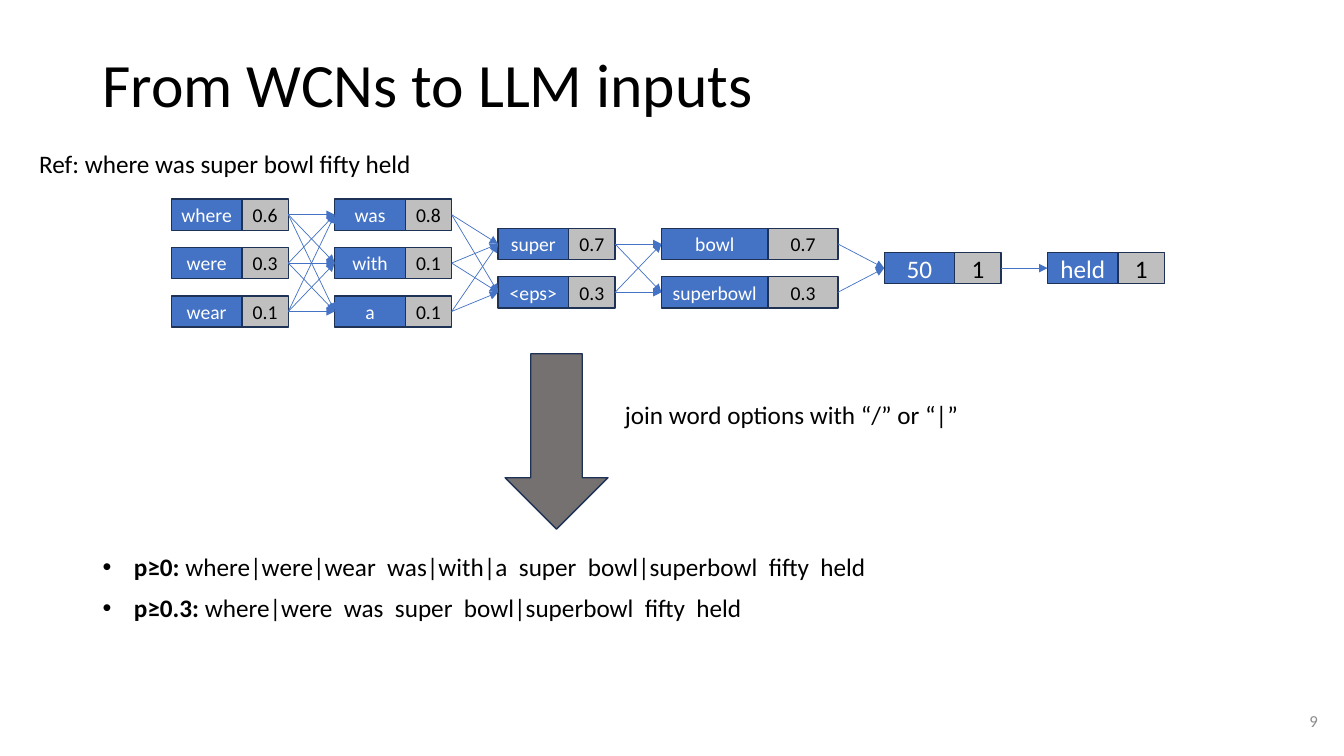
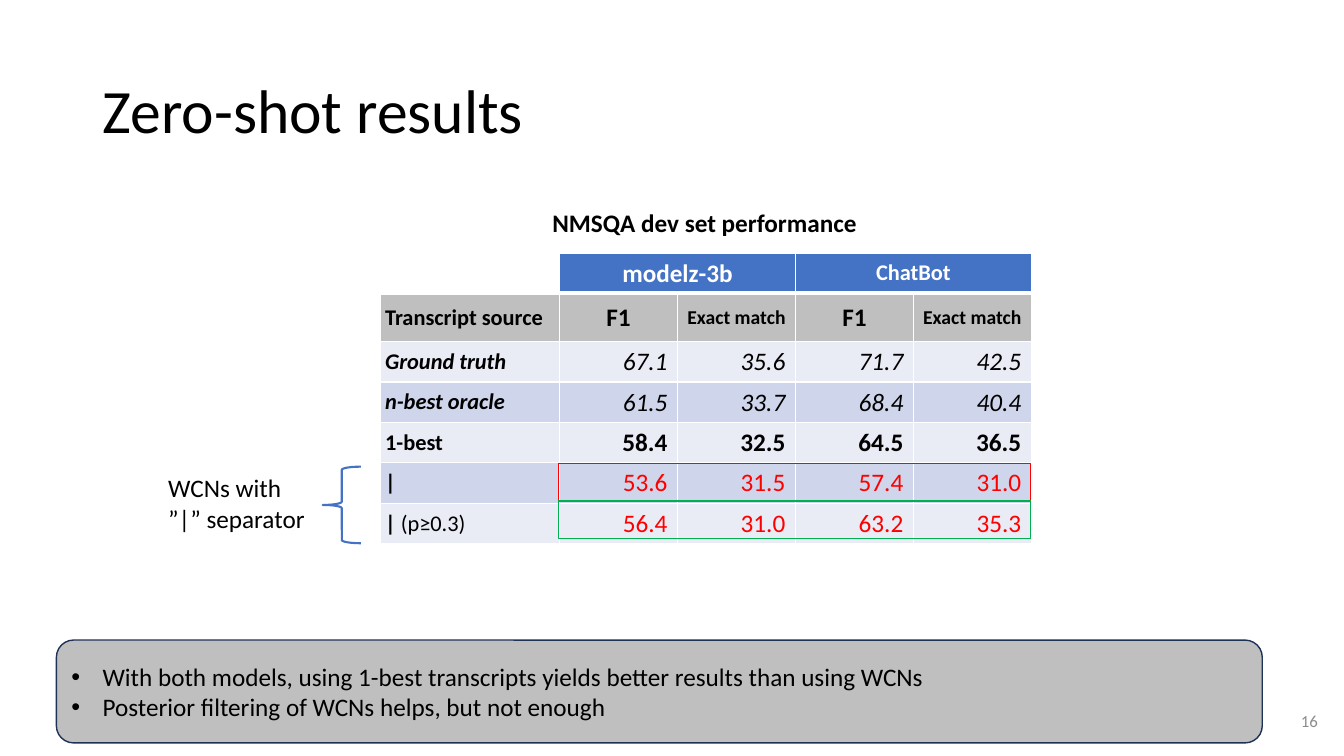
import itertools

import pptx
import pptx.util
import pptx.oxml
import pptx.oxml.ns
import pptx.dml.color
import pptx.enum.shapes
import pptx.enum.text
import lxml.etree

Inches = pptx.util.Inches
Pt = pptx.util.Pt
RGBColor = pptx.dml.color.RGBColor
MSO_SHAPE = pptx.enum.shapes.MSO_SHAPE
ALIGN = pptx.enum.text.PP_ALIGN
ANCHOR = pptx.enum.text.MSO_ANCHOR
qn = pptx.oxml.ns.qn

# Shared look
FONT = "Calibri"
BLACK = RGBColor(0x00, 0x00, 0x00)
WHITE = RGBColor(0xFF, 0xFF, 0xFF)
BLUE = RGBColor(0x44, 0x72, 0xC4)
NAVY = RGBColor(0x1E, 0x32, 0x56)
SILVER = RGBColor(0xBF, 0xBF, 0xBF)
ARROW_GRAY = RGBColor(0x76, 0x71, 0x71)
NUMBER_GRAY = RGBColor(0x8C, 0x8C, 0x8C)
RED = RGBColor(0xFF, 0x00, 0x00)
GREEN = RGBColor(0x00, 0xB0, 0x50)
BAND_LIGHT = RGBColor(0xE9, 0xEB, 0xF5)
BAND_DARK = RGBColor(0xCF, 0xD5, 0xEA)

# Confusion network: words with probabilities, one slot after another
BOX_HEIGHT = 0.31
ROW_PITCH = 0.48
SLOT_GAP = 0.46
NETWORK_LEFT = 1.7
NARROW = (0.7, 0.46)
WIDE = (1.06, 0.69)
SLOTS = [  # middle, (word width, probability width), text size, options
    (2.61, NARROW, 14, [("where", "0.6"), ("were", "0.3"), ("wear", "0.1")]),
    (2.61, NARROW, 14, [("was", "0.8"), ("with", "0.1"), ("a", "0.1")]),
    (2.66, NARROW, 14, [("super", "0.7"), ("<eps>", "0.3")]),
    (2.66, WIDE, 14, [("bowl", "0.7"), ("superbowl", "0.3")]),
    (2.66, NARROW, 18, [("50", "1")]),
    (2.66, NARROW, 18, [("held", "1")]),
]

# Result rows: label, label remainder, values, bold, italic, colour
RESULTS = [
    ("Ground truth", "", ["67.1", "35.6", "71.7", "42.5"], False, True, BLACK),
    ("n-best oracle", "", ["61.5", "33.7", "68.4", "40.4"], False, True, BLACK),
    ("1-best", "", ["58.4", "32.5", "64.5", "36.5"], True, False, BLACK),
    ("|", "", ["53.6", "31.5", "57.4", "31.0"], False, False, RED),
    ("| ", "(p≥0.3)", ["56.4", "31.0", "63.2", "35.3"], False, False, RED),
]
COLUMN_WIDTHS = [1.78] + [1.17] * 4
ROW_HEIGHTS = [0.4, 0.48] + [0.4] * 5


def add_run(paragraph, text, size=18, color=BLACK, bold=False, italic=False):
    run = paragraph.add_run()
    run.text = text
    font = run.font
    font.name, font.size, font.bold, font.italic = FONT, Pt(size), bold, italic
    font.color.rgb = color


def add_bullet(paragraph):
    properties = paragraph._p.get_or_add_pPr()
    properties.set("marL", str(Inches(0.31)))
    properties.set("indent", str(Inches(-0.31)))
    font = lxml.etree.SubElement(properties, qn("a:buFont"))
    font.set("typeface", "Arial")
    lxml.etree.SubElement(properties, qn("a:buChar")).set("char", "•")


def write_lines(text_frame, lines, bullets=False, align=ALIGN.LEFT, **style):
    """Each line is a text, or a pair of a bold lead and plain text."""
    for index, line in enumerate(lines):
        paragraph = text_frame.paragraphs[0] if index == 0 else text_frame.add_paragraph()
        paragraph.alignment = align
        if bullets:
            add_bullet(paragraph)
        if isinstance(line, tuple):
            add_run(paragraph, line[0], **{**style, "bold": True})
            line = line[1]
        add_run(paragraph, line, **style)


def add_text(slide, box, lines, wrap=True, anchor=ANCHOR.TOP, **style):
    shape = slide.shapes.add_textbox(*map(Inches, box))
    shape.text_frame.word_wrap = wrap
    shape.text_frame.vertical_anchor = anchor
    write_lines(shape.text_frame, lines, **style)
    return shape


def add_shape(slide, kind, box, fill=None, line=NAVY, line_width=1):
    shape = slide.shapes.add_shape(kind, *map(Inches, box))
    shape.shadow.inherit = False
    if fill is None:
        shape.fill.background()
    else:
        shape.fill.solid()
        shape.fill.fore_color.rgb = fill
    shape.line.color.rgb = line
    shape.line.width = Pt(line_width)
    return shape


def add_label_box(slide, box, text, fill, color, size):
    shape = add_shape(slide, MSO_SHAPE.RECTANGLE, box, fill)
    text_frame = shape.text_frame
    text_frame.margin_left = text_frame.margin_right = Inches(0.05)
    text_frame.vertical_anchor = ANCHOR.MIDDLE
    write_lines(text_frame, [text], align=ALIGN.CENTER, size=size, color=color)
    return shape


def add_arrow(slide, source, target):
    connector = slide.shapes.add_connector(
        pptx.enum.shapes.MSO_CONNECTOR.STRAIGHT, 0, 0, 0, 0)
    connector.begin_connect(source, 3)
    connector.end_connect(target, 1)
    connector.line.color.rgb = BLUE
    connector.line.width = Pt(0.5)
    line = connector.line._get_or_add_ln()
    lxml.etree.SubElement(line, qn("a:tailEnd")).set("type", "triangle")
    lxml.etree.SubElement(connector._element.spPr, qn("a:effectLst"))


def add_network(slide):
    columns = []
    left = NETWORK_LEFT
    for middle, (word_width, chance_width), size, options in SLOTS:
        top = middle - ((len(options) - 1) * ROW_PITCH + BOX_HEIGHT) / 2
        column = []
        for row, (word, chance) in enumerate(options):
            y = top + row * ROW_PITCH
            column.append((
                add_label_box(slide, (left, y, word_width, BOX_HEIGHT),
                              word, BLUE, WHITE, size),
                add_label_box(slide, (left + word_width, y, chance_width, BOX_HEIGHT),
                              chance, SILVER, BLACK, size)))
        columns.append(column)
        left += word_width + chance_width + SLOT_GAP
    for column, following in zip(columns, columns[1:]):
        for source, target in itertools.product(column, following):
            add_arrow(slide, source[1], target[0])


def set_borders(cell, **widths):
    properties = cell._tc.get_or_add_tcPr()
    for index, side in enumerate("LRTB"):
        line = lxml.etree.Element(qn("a:ln" + side))
        line.set("w", str(Pt(widths.get(side, 1))))
        fill = lxml.etree.SubElement(line, qn("a:solidFill"))
        lxml.etree.SubElement(fill, qn("a:srgbClr")).set("val", str(WHITE))
        properties.insert(index, line)


def fill_cell(cell, line, fill, margin=0.05, align=ALIGN.LEFT, **style):
    cell.fill.solid()
    cell.fill.fore_color.rgb = fill
    cell.vertical_anchor = ANCHOR.MIDDLE
    cell.margin_left = cell.margin_right = Inches(margin)
    write_lines(cell.text_frame, [line], align=align, **style)


def add_results_table(slide):
    frame = slide.shapes.add_table(
        len(ROW_HEIGHTS), len(COLUMN_WIDTHS), Inches(3.77), Inches(2.51),
        Inches(sum(COLUMN_WIDTHS)), Inches(sum(ROW_HEIGHTS)))
    table = frame.table
    table.first_row = table.horz_banding = False
    for column, width in zip(table.columns, COLUMN_WIDTHS):
        column.width = Inches(width)
    for row, height in zip(table.rows, ROW_HEIGHTS):
        row.height = Inches(height)

    # Model names over pairs of columns
    table.cell(0, 0).fill.background()
    for column, name, size in [(1, "modelz-3b", 18), (3, "ChatBot", 16)]:
        table.cell(0, column).merge(table.cell(0, column + 1))
        fill_cell(table.cell(0, column), name, BLUE, align=ALIGN.CENTER,
                  size=size, color=WHITE, bold=True)

    # Column headings
    fill_cell(table.cell(1, 0), "Transcript source", SILVER, size=16, bold=True)
    for column, (heading, size) in enumerate([("F1", 18), ("Exact match", 14)] * 2, 1):
        fill_cell(table.cell(1, column), heading, SILVER, align=ALIGN.CENTER,
                  size=size, bold=True)

    # Results
    for row, (lead, rest, values, bold, italic, color) in enumerate(RESULTS, 2):
        band = BAND_DARK if row % 2 else BAND_LIGHT
        label = (lead, rest) if rest else lead
        fill_cell(table.cell(row, 0), label, band, size=16,
                  bold=not rest, italic=italic)
        for column, value in enumerate(values, 1):
            fill_cell(table.cell(row, column), value, band, margin=0.1,
                      align=ALIGN.RIGHT, color=color, bold=bold, italic=italic)

    for row in range(len(ROW_HEIGHTS)):
        thick = {0: {"B": 3}, 1: {"T": 3}}.get(row, {})
        for column in range(len(COLUMN_WIDTHS)):
            set_borders(table.cell(row, column), **thick)


def new_slide(presentation, title, title_box, number):
    slide = presentation.slides.add_slide(presentation.slide_layouts[6])
    heading = add_text(slide, title_box, [title], anchor=ANCHOR.MIDDLE, size=44)
    heading.text_frame.paragraphs[0].line_spacing = 0.9
    add_text(slide, (10.17, 6.95, 3, 0.4), [number], anchor=ANCHOR.MIDDLE,
             align=ALIGN.RIGHT, size=12, color=NUMBER_GRAY)
    return slide


def build_inputs_slide(presentation):
    slide = new_slide(presentation, "From WCNs to LLM inputs",
                      (0.92, 0.4, 10.37, 0.94), "9")
    add_text(slide, (0.29, 1.42, 4.45, 0.4), ["Ref: where was super bowl fifty held"])
    add_network(slide)
    add_shape(slide, MSO_SHAPE.DOWN_ARROW, (5.01, 3.51, 1.02, 1.74), ARROW_GRAY)
    add_text(slide, (6.1, 3.91, 3.54, 0.4),
             ["join word options with “/” or “|”"], wrap=False)
    # Resulting inputs for two probability thresholds
    add_text(slide, (0.92, 5.42, 7.87, 0.4),
             [("p≥0: ", "where|were|wear  was|with|a  super  bowl|superbowl  fifty  held")],
             wrap=False, bullets=True)
    add_text(slide, (0.92, 5.83, 6.63, 0.4),
             [("p≥0.3: ", "where|were  was  super  bowl|superbowl  fifty  held")],
             wrap=False, bullets=True)


def build_results_slide(presentation):
    slide = new_slide(presentation, "Zero-shot results", (0.92, 0.4, 11.5, 1.45), "16")
    add_results_table(slide)
    add_text(slide, (5.38, 2.01, 3.25, 0.4), ["NMSQA dev set performance"],
             wrap=False, bold=True)
    # Takeaways
    panel = add_shape(slide, MSO_SHAPE.ROUNDED_RECTANGLE, (0.56, 6.35, 11.96, 1.02), SILVER)
    panel.text_frame.vertical_anchor = ANCHOR.MIDDLE
    write_lines(panel.text_frame, [
        "With both models, using 1-best transcripts yields better results than using WCNs",
        "Posterior filtering of WCNs helps, but not enough"], bullets=True)
    # Marks on the last two rows
    add_text(slide, (1.57, 4.64, 1.72, 0.71), ["WCNs with", "”|” separator"])
    add_shape(slide, MSO_SHAPE.LEFT_BRACE, (3.2, 4.63, 0.38, 0.76),
              line=BLUE, line_width=1.5)
    for index, color in enumerate([RED, GREEN]):
        add_shape(slide, MSO_SHAPE.RECTANGLE,
                  (5.54, 4.6 + index * 0.37, 4.68, 0.37), line=color)


def main():
    presentation = pptx.Presentation()
    presentation.slide_width = Inches(13.33)
    presentation.slide_height = Inches(7.5)
    build_inputs_slide(presentation)
    build_results_slide(presentation)
    presentation.save("out.pptx")


if __name__ == "__main__":
    main()
